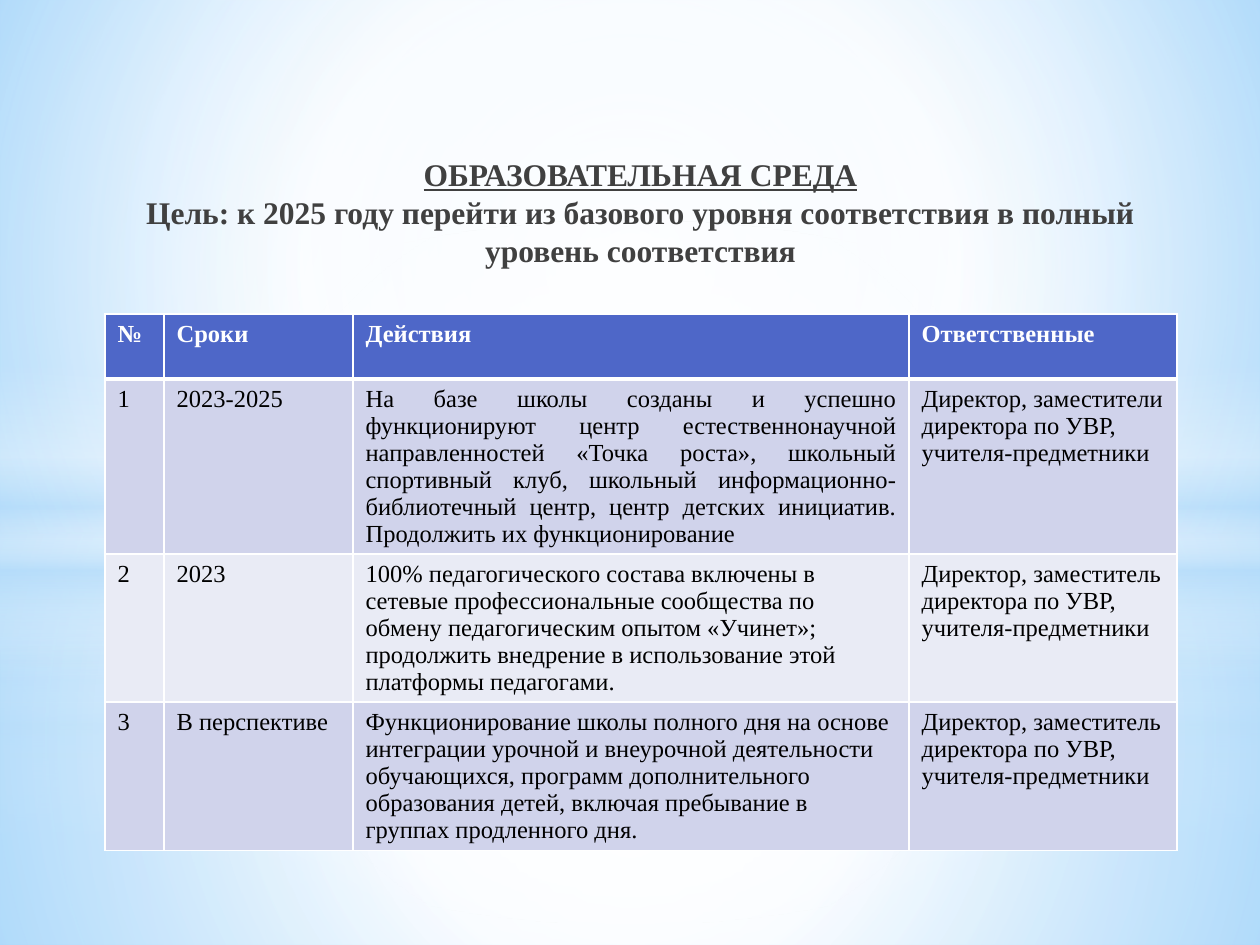
from dataclasses import dataclass

from pptx import Presentation
from pptx.dml.color import RGBColor
from pptx.enum.shapes import MSO_SHAPE as Shape
from pptx.enum.text import MSO_ANCHOR as Anchor, PP_ALIGN as Align
from pptx.oxml import parse_xml
from pptx.oxml.ns import nsdecls, qn
from pptx.util import Emu, Pt

EMU_PER_INCH = 914400
PX_PER_INCH = 126


@dataclass(frozen=True)
class Theme:
    font: str = "Times New Roman"
    title_size: int = 18
    table_size: int = 14
    title: str = "404040"
    text: str = "000000"
    white: str = "FFFFFF"
    sky: str = "B4DCFA"
    sky_left: str = "9ED5FF"
    sky_deep: str = "5BB9FF"
    header: str = "4E67C8"
    bands: tuple = ("D0D3EB", "E9EBF5")
    border: int = 1
    header_border: int = 3


def px(length):
    return Emu(round(length * EMU_PER_INCH / PX_PER_INCH))


class SlideBuilder:
    def __init__(self, slide, theme):
        self.slide = slide
        self.theme = theme

    def gradient(self, fill, parent, stops, focus=None):
        stop_xml = "".join(
            f'<a:gs pos="{position * 1000}"><a:srgbClr val="{color}">'
            f'<a:alpha val="{opacity * 1000}"/></a:srgbClr></a:gs>'
            for position, color, opacity in stops
        )
        if focus:
            sides = " ".join(f'{side}="{value * 1000}"' for side, value in zip("ltrb", focus))
            direction = f'<a:path path="circle"><a:fillToRect {sides}/></a:path>'
        else:
            direction = '<a:lin ang="5400000" scaled="0"/>'
        fill.gradient()
        parent.replace(parent.find(qn("a:gradFill")), parse_xml(
            f'<a:gradFill {nsdecls("a")} rotWithShape="1">'
            f"<a:gsLst>{stop_xml}</a:gsLst>{direction}</a:gradFill>"
        ))

    def background(self, stops, focus):
        fill = self.slide.background.fill
        properties = self.slide.element.find(".//" + qn("p:bgPr"))
        self.gradient(fill, properties, stops, focus)

    def glow(self, kind, top, height, stops, focus=None):
        shape = self.slide.shapes.add_shape(kind, 0, px(top), px(1260), px(height))
        shape.shadow.inherit = False
        shape.line.fill.background()
        self.gradient(shape.fill, shape.element.spPr, stops, focus)

    def format_run(self, run, size, color, bold=False, underline=False):
        font = run.font
        font.name = self.theme.font
        font.size = Pt(size)
        font.bold = bold
        font.underline = underline
        font.color.rgb = RGBColor.from_string(color)

    def title(self, heading, goal, left, top, width, height):
        shape = self.slide.shapes.title
        shape.left, shape.top, shape.width, shape.height = map(px, (left, top, width, height))
        shape.element.getparent().append(shape.element)
        frame = shape.text_frame
        frame.text = f"{heading}\v{goal}"
        frame.word_wrap = True
        frame.vertical_anchor = Anchor.BOTTOM
        paragraph = frame.paragraphs[0]
        paragraph.alignment = Align.CENTER
        for run in paragraph.runs:
            self.format_run(run, self.theme.title_size, self.theme.title, True, run.text == heading)

    def borders(self, cell, top, bottom):
        properties = cell._tc.get_or_add_tcPr()
        sides = {"L": self.theme.border, "R": self.theme.border, "T": top, "B": bottom}
        for side, width in sides.items():
            properties.append(parse_xml(
                f'<a:ln{side} {nsdecls("a")} w="{Pt(width)}"><a:solidFill>'
                f'<a:srgbClr val="{self.theme.white}"/></a:solidFill></a:ln{side}>'
            ))

    def cell(self, cell, text, row):
        theme = self.theme
        is_header = row == 0
        self.borders(
            cell,
            theme.header_border if row == 1 else theme.border,
            theme.header_border if is_header else theme.border,
        )
        cell.fill.solid()
        color = theme.header if is_header else theme.bands[(row - 1) % 2]
        cell.fill.fore_color.rgb = RGBColor.from_string(color)
        cell.text_frame.text = text
        for run in cell.text_frame.paragraphs[0].runs:
            self.format_run(run, theme.table_size, theme.white if is_header else theme.text, is_header)

    def table(self, rows, left, top, widths, heights):
        table = self.slide.shapes.add_table(
            len(rows), len(widths), px(left), px(top), px(sum(widths)), px(sum(heights))
        ).table
        for column, width in zip(table.columns, widths):
            column.width = px(width)
        for row, height in zip(table.rows, heights):
            row.height = px(height)
        for row_index, texts in enumerate(rows):
            for column_index, text in enumerate(texts):
                self.cell(table.cell(row_index, column_index), text, row_index)
        return table


def main():
    presentation = Presentation()
    presentation.slide_width, presentation.slide_height = px(1260), px(945)
    slide = presentation.slides.add_slide(presentation.slide_layouts[5])
    theme = Theme()
    builder = SlideBuilder(slide, theme)

    white, sky = theme.white, theme.sky
    center = (50, 50, 50, 50)
    builder.background(
        [(0, theme.sky_left, 100), (60, white, 100), (100, theme.sky_deep, 100)], (20, 10, 20, 60)
    )
    beam = [(0, white, 0), (29, white, 30), (45, sky, 40), (55, white, 26), (65, sky, 60), (100, white, 0)]
    for horizon, beam_top, shift, fade in ((703, 519, 0, 56), (533, 365, 1, 54)):
        lower = [(0, white, 91 + shift), (37, white, 76 + shift), (100, sky, 79 + shift)]
        upper = [(0, white, 89 + shift), (48, white, 62 + shift), (100, sky, 79 + shift)]
        builder.glow(Shape.RECTANGLE, horizon, 945 - horizon, lower, center)
        builder.glow(Shape.RECTANGLE, 0, horizon, upper, center)
        builder.glow(Shape.RECTANGLE, beam_top, 315, beam)
        builder.glow(Shape.OVAL, 221, 703, [(0, white, 100), (fade, white, 0)], center)

    builder.title(
        "ОБРАЗОВАТЕЛЬНАЯ СРЕДА",
        "Цель: к 2025 году перейти из базового уровня соответствия в полный уровень соответствия",
        105, 106, 1071, 169,
    )
    deputy = "Директор, заместитель директора по УВР, учителя-предметники"
    rows = [
        ("№", "Сроки", "Действия", "Ответственные"),
        ("1", "2023-2025",
         "На базе школы созданы и успешно функционируют центр естественнонаучной направленностей "
         "«Точка роста», школьный спортивный клуб, школьный информационно-библиотечный центр, "
         "центр детских инициатив. Продолжить их функционирование",
         "Директор, заместители директора по УВР, учителя-предметники"),
        ("2", "2023",
         "100% педагогического состава включены в сетевые профессиональные сообщества по обмену "
         "педагогическим опытом «Учинет»; продолжить внедрение в использование этой платформы педагогами.",
         deputy),
        ("3", "В перспективе",
         "Функционирование школы полного дня на основе интеграции урочной и внеурочной деятельности "
         "обучающихся, программ дополнительного образования детей, включая пребывание в группах "
         "продленного дня.",
         deputy),
    ]
    table = builder.table(rows, 105, 314, (59, 189, 556, 268), (65, 175, 148, 148))
    table.cell(1, 2).text_frame.paragraphs[0].alignment = Align.JUSTIFY
    presentation.save("out.pptx")


if __name__ == "__main__":
    main()
